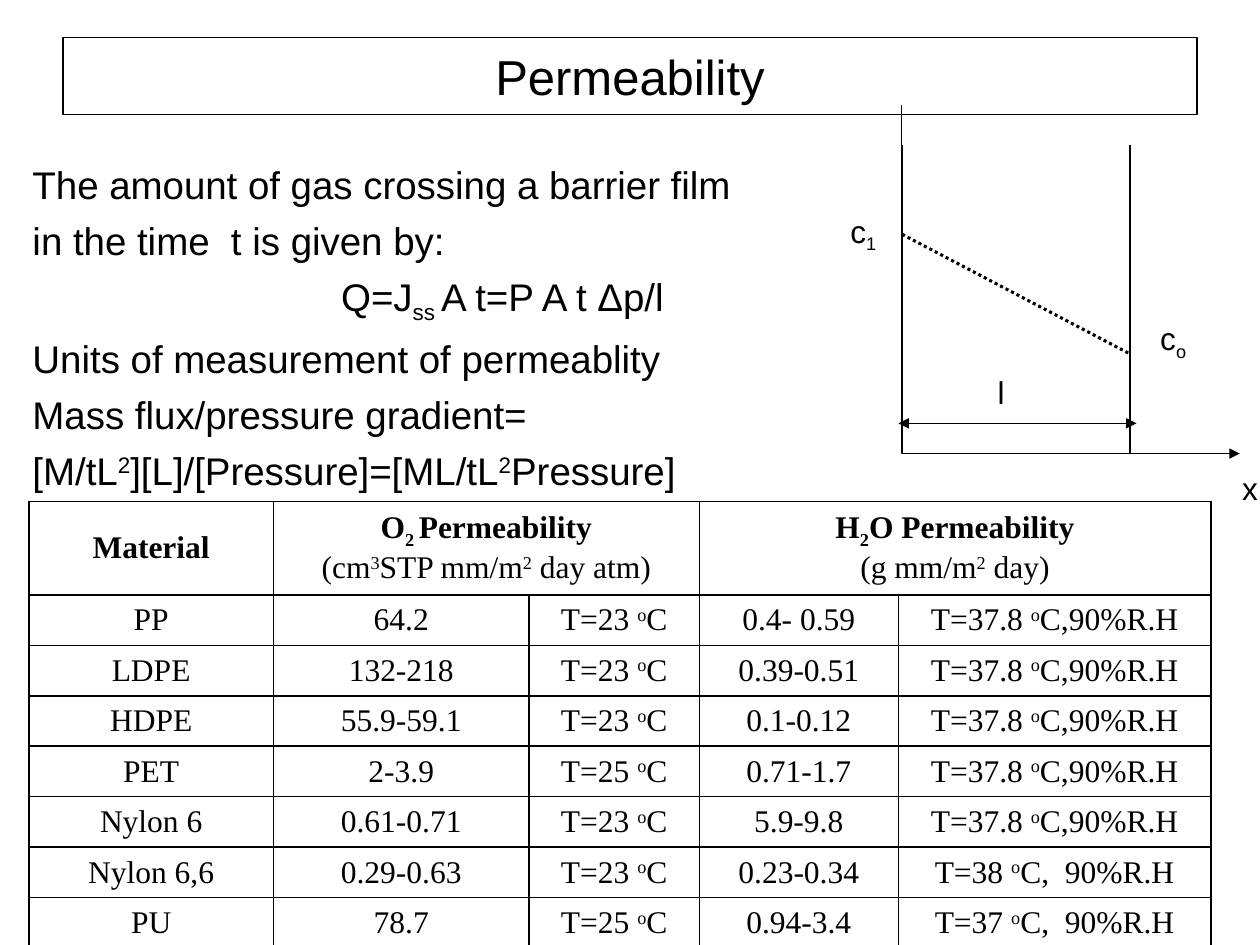
from dataclasses import dataclass

from lxml.etree import SubElement
from pptx import Presentation
from pptx.dml.color import RGBColor
from pptx.enum.dml import MSO_LINE
from pptx.enum.shapes import MSO_CONNECTOR, MSO_SHAPE
from pptx.enum.text import MSO_ANCHOR, PP_ALIGN
from pptx.oxml.ns import qn
from pptx.util import Inches, Pt


@dataclass(frozen=True)
class Theme:
    ink: RGBColor = RGBColor(0, 0, 0)
    paper: RGBColor = RGBColor(255, 255, 255)
    sans: str = "Arial"
    serif: str = "Times New Roman"
    title: int = 28
    body: int = 22
    small: int = 18
    thin: float = 0.75
    dots: float = 1.75


THEME = Theme()
SHIFT = {"_": "-25000", "^": "30000"}

BODY = [
    "The amount of gas crossing a barrier film",
    "in the time  t is given by:",
    "Q=J|_ss |A t=P A t Δp/l",
    "Units of measurement of permeablity",
    "Mass flux/pressure gradient=",
    "[M/tL|^2|][L]/[Pressure]=[ML/tL|^2|Pressure]",
]
FORMULA = 2

WIDTHS = [1.94, 2.03, 1.35, 1.58, 2.48]
HEAD = {
    0: ["Material"],
    1: ["O|_2 |Permeability", "(cm|^3|STP mm/m|^2| day atm)"],
    3: ["H|_2|O Permeability", "(g mm/m|^2| day)"],
}
WARM = "T=23 |^o|C"
ROOM = "T=25 |^o|C"
HUMID = "T=37.8 |^o|C,90%R.H"
ROWS = [
    ["PP", "64.2", WARM, "0.4- 0.59", HUMID],
    ["LDPE", "132-218", WARM, "0.39-0.51", HUMID],
    ["HDPE", "55.9-59.1", WARM, "0.1-0.12", HUMID],
    ["PET", "2-3.9", ROOM, "0.71-1.7", HUMID],
    ["Nylon 6", "0.61-0.71", WARM, "5.9-9.8", HUMID],
    ["Nylon 6,6", "0.29-0.63", WARM, "0.23-0.34", "T=38 |^o|C,  90%R.H"],
    ["PU", "78.7", ROOM, "0.94-3.4", "T=37 |^o|C,  90%R.H"],
]


def write(frame, lines, size=THEME.small, font=THEME.sans, align=PP_ALIGN.LEFT,
          before=0, bold=False):
    """Write lines; "|" splits runs, "_" lowers a run and "^" raises it.

    With bold, only the first line is bold.
    """
    for i, line in enumerate(lines):
        para = frame.paragraphs[0] if i == 0 else frame.add_paragraph()
        para.alignment = align
        para.space_before = Pt(before)
        for part in line.split("|"):
            shift = SHIFT.get(part[:1])
            run = para.add_run()
            run.text = part[1:] if shift else part
            run.font.name = font
            run.font.size = Pt(size)
            run.font.bold = bold and i == 0
            run.font.color.rgb = THEME.ink
            if shift:
                run.font._element.set("baseline", shift)


def add_text(shapes, box, lines, wrap=True, **style):
    frame = shapes.add_textbox(*map(Inches, box)).text_frame
    frame.word_wrap = wrap
    write(frame, lines, **style)
    return frame


def add_rect(shapes, box, fill=None, line=True):
    rect = shapes.add_shape(MSO_SHAPE.RECTANGLE, *map(Inches, box))
    rect.shadow.inherit = False
    if fill is None:
        rect.fill.background()
    else:
        rect.fill.solid()
        rect.fill.fore_color.rgb = fill
    if line:
        rect.line.color.rgb = THEME.ink
        rect.line.width = Pt(THEME.thin)
    else:
        rect.line.fill.background()
    return rect


def add_line(shapes, start, end, width=THEME.thin, dash=None, heads=()):
    """Draw a line; heads may name "headEnd" (start) and "tailEnd" (end)."""
    line = shapes.add_connector(
        MSO_CONNECTOR.STRAIGHT, *map(Inches, (*start, *end)))
    line.line.color.rgb = THEME.ink
    line.line.width = Pt(width)
    if dash:
        line.line.dash_style = dash
    stroke = line.line._get_or_add_ln()
    for head in heads:
        SubElement(stroke, qn("a:" + head), type="triangle")
    SubElement(line._element.spPr, qn("a:effectLst"))


def add_title(slide, box):
    frame = add_rect(slide.shapes, box).text_frame
    frame.vertical_anchor = MSO_ANCHOR.MIDDLE
    write(frame, ["Permeability"], size=THEME.title, align=PP_ALIGN.CENTER)


def add_body(slide, box):
    frame = add_text(slide.shapes, box, BODY, size=THEME.body, before=5.5)
    props = frame.paragraphs[FORMULA]._p.get_or_add_pPr()
    props.set("marL", str(Inches(2.45)))


def add_film(slide, box):
    """Draw the concentration drop across a film whose walls fill the box."""
    x, y, wide, high = box
    right, base = x + wide, y + high
    shapes = slide.shapes.add_group_shape().shapes
    add_rect(shapes, box, THEME.paper)
    add_line(shapes, (right - 0.32, base), (right + 0.87, base),
             heads=["tailEnd"])
    add_rect(shapes, (x, y - 0.24, wide + 0.16, 0.55), THEME.paper, line=False)
    add_line(shapes, (x, y + 1.02), (right, y + 1.97), THEME.dots,
             MSO_LINE.ROUND_DOT)
    add_line(shapes, (x - 0.03, base - 0.24), (right + 0.05, base - 0.24),
             heads=["headEnd", "tailEnd"])
    labels = [
        ("c|_1", -0.51, 0.79, 0.41),
        ("c|_o", 1.95, 1.64, 0.41),
        ("x", 2.6, 2.83, 0.32),
        ("l", 0.66, 2.07, 0.25),
    ]
    for text, dx, dy, width in labels:
        add_text(shapes, (x + dx, y + dy, width, 0.4), [text], wrap=False)


def edge_cell(cell):
    """Draw thin lines on all four sides of a cell and clear its fill."""
    props = cell._tc.get_or_add_tcPr()
    for side in ("lnL", "lnR", "lnT", "lnB"):
        line = SubElement(props, qn("a:" + side), w=str(Pt(1)))
        fill = SubElement(line, qn("a:solidFill"))
        SubElement(fill, qn("a:srgbClr"), val=str(THEME.ink))
    cell.fill.background()


def fill_cell(cell, lines, bold=False):
    cell.vertical_anchor = MSO_ANCHOR.MIDDLE
    write(cell.text_frame, lines, font=THEME.serif,
          align=PP_ALIGN.CENTER, bold=bold)


def add_data(slide, box):
    table = slide.shapes.add_table(
        len(ROWS) + 1, len(WIDTHS), *map(Inches, box)).table
    table.first_row = table.horz_banding = False
    for col, width in zip(table.columns, WIDTHS):
        col.width = Inches(width)
    for i, row in enumerate(table.rows):
        row.height = Inches(0.4 if i else 0.7)
    for cell in table.iter_cells():
        edge_cell(cell)
    for col, lines in HEAD.items():
        cell = table.cell(0, col)
        if col:
            cell.merge(table.cell(0, col + 1))
        fill_cell(cell, lines, bold=True)
    for i, row in enumerate(ROWS, 1):
        for j, text in enumerate(row):
            fill_cell(table.cell(i, j), [text])


def main():
    deck = Presentation()
    deck.slide_width, deck.slide_height = Inches(10), Inches(7.5)
    slide = deck.slides.add_slide(deck.slide_layouts[6])
    add_body(slide, (0.16, 1.23, 9.84, 5.8))
    add_film(slide, (7.16, 0.84, 1.81, 2.76))
    add_title(slide, (0.5, 0.3, 9, 0.61))
    add_data(slide, (0.23, 3.98, sum(WIDTHS), 3.5))
    deck.save("out.pptx")


if __name__ == "__main__":
    main()
